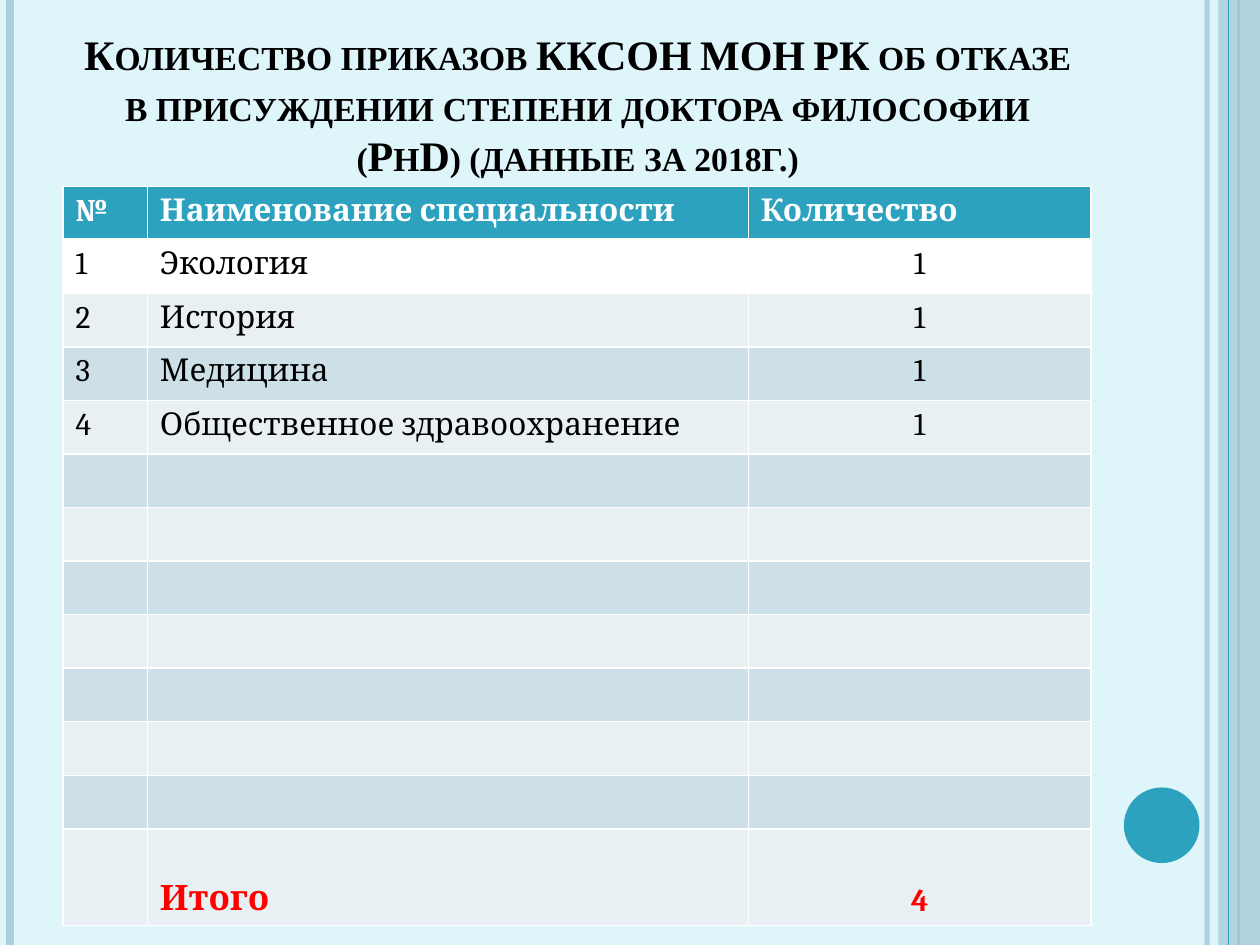
"""Builds a slide with a table of refused doctoral degrees by speciality."""
import lxml.etree
import pptx
import pptx.dml.color
import pptx.enum.shapes
import pptx.enum.text
import pptx.oxml
import pptx.oxml.ns
import pptx.util

Inches = pptx.util.Inches
Pt = pptx.util.Pt
qn = pptx.oxml.ns.qn
ALIGN = pptx.enum.text.PP_ALIGN
ANCHOR = pptx.enum.text.MSO_ANCHOR

ROWS = [
    ("1", "Экология", "1"),
    ("2", "История", "1"),
    ("3", "Медицина", "1"),
    ("4", "Общественное здравоохранение", "1"),
]
EMPTY_ROWS = 7


def color(value):
    return pptx.dml.color.RGBColor.from_string(value)


def set_alpha(element, percent):
    for node in element.iter(qn("a:srgbClr")):
        lxml.etree.SubElement(node, qn("a:alpha")).set("val", str(percent * 1000))


def write_text(frame, text, size=18, font="Cambria", ink="000000", bold=False,
               align=ALIGN.LEFT, small_caps=False):
    paragraph = frame.paragraphs[0]
    paragraph.alignment = align
    paragraph.font.size = Pt(size)
    paragraph.font.name = font
    if not text:
        return
    run = paragraph.add_run()
    run.text = text
    run.font.size = Pt(size)
    run.font.name = font
    run.font.bold = bold
    run.font.color.rgb = color(ink)
    if small_caps:
        run._r.get_or_add_rPr().set("cap", "small")


class SlideBuilder:
    accent = "2DA2BF"
    pale = "ADCEDC"
    bands = ("CDE0E8", "E8F0F4")
    white = "FFFFFF"
    total_ink = "FF0000"

    def __init__(self, presentation):
        self.height = presentation.slide_height
        self.slide = presentation.slides.add_slide(presentation.slide_layouts[5])
        self.slide.background.fill.solid()
        self.slide.background.fill.fore_color.rgb = color("DEF5FA")

    def vertical_line(self, x, ink, width, alpha=None):
        line = self.slide.shapes.add_connector(
            pptx.enum.shapes.MSO_CONNECTOR.STRAIGHT, Inches(x), 0, Inches(x), self.height)
        line.line.color.rgb = color(ink)
        line.line.width = Pt(width)
        if alpha:
            set_alpha(line.line._get_or_add_ln(), alpha)
        lxml.etree.SubElement(line._element.spPr, qn("a:effectLst"))

    def shape(self, kind, left, top, width, height, fill, alpha=None):
        shape = self.slide.shapes.add_shape(
            kind, Inches(left), Inches(top), Inches(width), Inches(height))
        shape.shadow.inherit = False
        shape.line.fill.background()
        shape.fill.solid()
        shape.fill.fore_color.rgb = color(fill)
        if alpha:
            set_alpha(shape._element.spPr, alpha)

    def title(self, text, left, top, width, height):
        title = self.slide.shapes.title
        title.left, title.top = Inches(left), Inches(top)
        title.width, title.height = Inches(width), Inches(height)
        frame = title.text_frame
        frame.word_wrap = True
        frame.auto_size = pptx.enum.text.MSO_AUTO_SIZE.NONE
        frame.vertical_anchor = ANCHOR.BOTTOM
        write_text(frame, text, size=24, font="Times New Roman", bold=True,
                   align=ALIGN.CENTER, small_caps=True)

    def cell(self, cell, text, fill, bottom_border=1, anchor=ANCHOR.TOP, **style):
        properties = cell._tc.get_or_add_tcPr()
        for side, width in (("L", 1), ("R", 1), ("T", 1), ("B", bottom_border)):
            border = lxml.etree.SubElement(properties, qn(f"a:ln{side}"), w=str(Pt(width)))
            solid = lxml.etree.SubElement(border, qn("a:solidFill"))
            lxml.etree.SubElement(solid, qn("a:srgbClr"), val=self.white)
        cell.fill.solid()
        cell.fill.fore_color.rgb = color(fill)
        cell.vertical_anchor = anchor
        write_text(cell.text_frame, text, **style)

    def table(self, header, rows, total, left, top, widths, height, total_height):
        records = [header, *rows, total]
        last = len(records) - 1
        table = self.slide.shapes.add_table(
            len(records), len(widths), Inches(left), Inches(top),
            Inches(sum(widths)), Inches(height)).table
        for column, width in zip(table.columns, widths):
            column.width = Inches(width)
        for index, record in enumerate(records):
            table.rows[index].height = Inches(
                total_height if index == last else (height - total_height) / last)
            for column, text in enumerate(record):
                style = {"fill": self.white if index == 1 else self.bands[(index + 1) % 2]}
                if index and column == 2:
                    style["align"] = ALIGN.CENTER
                if index == 0:
                    style.update(fill=self.accent, ink=self.white, bold=True, bottom_border=3)
                elif index == last:
                    style.update(ink=self.total_ink, bold=True, anchor=ANCHOR.BOTTOM,
                                 size=20 if column == 1 else 18)
                self.cell(table.cell(index, column), text, **style)


def main():
    presentation = pptx.Presentation()
    presentation.slide_width = Inches(10)
    presentation.slide_height = Inches(7.5)
    builder = SlideBuilder(presentation)
    shapes = pptx.enum.shapes.MSO_SHAPE

    builder.vertical_line(9.58, builder.pale, 3, alpha=93)
    builder.vertical_line(0.08, builder.pale, 4.5)
    builder.vertical_line(9.83, builder.accent, 1.5)
    builder.shape(shapes.RECTANGLE, 9.67, 0, 0.33, 7.5, builder.pale, alpha=87)
    builder.vertical_line(9.75, builder.accent, 0.75)
    builder.shape(shapes.OVAL, 8.92, 6.25, 0.6, 0.6, builder.accent)

    builder.title("Количество приказов ККСОН МОН РК об отказе в присуждении степени "
                  "доктора философии (PhD) (данные за 2018г.)", 0.5, 0.3, 8.17, 1.18)
    builder.table(
        header=("№", "Наименование специальности", "Количество"),
        rows=ROWS + [("", "", "")] * EMPTY_ROWS,
        total=("", "Итого", "4"),
        left=0.5, top=1.48, widths=(0.67, 4.77, 2.72), height=5.87, total_height=0.77)
    presentation.save("out.pptx")


if __name__ == "__main__":
    main()
